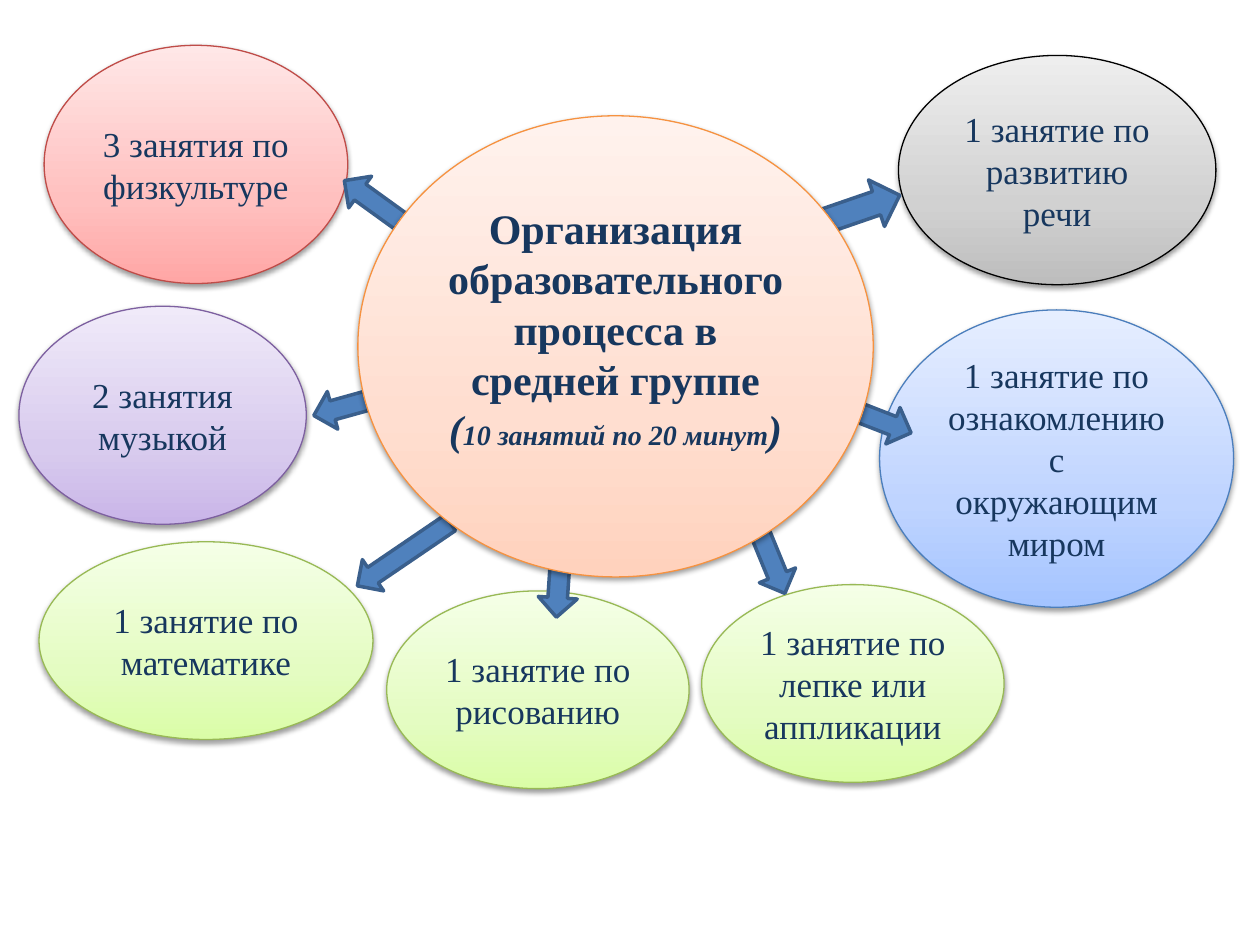
import pptx
import pptx.dml.color
import pptx.enum.shapes
import pptx.enum.text
import pptx.oxml
import pptx.oxml.ns
import pptx.util

Pt = pptx.util.Pt
SHAPES = pptx.enum.shapes.MSO_SHAPE

COLORS = {"text": "17375E", "arrow": "4F81BD", "arrow_line": "3A5F8C", "shadow": "000000"}

# Outline, then the gradient from bottom to top
PALETTES = {
    "red": ("BF4C48", "FFA6A5", "FFC0BF", "FFE7E7"),
    "gray": ("000000", "BDBDBD", "D1D1D1", "EEEEEE"),
    "blue": ("4B7EBC", "A4C4FF", "BFD4FF", "E6EEFF"),
    "green": ("98B955", "DAFDA7", "E4FCC2", "F5FFE7"),
    "purple": ("7D60A0", "C9B5E8", "D8CBEE", "F0EAF9"),
    "orange": ("F69240", "FFD2BD", "FFDED0", "FFF2ED"),
}

LESSONS = [
    ("3 занятия по физкультуре", "red", (25.2, 25.9, 173.5, 136.1)),
    ("1 занятие по развитию речи", "gray", (513.4, 31.7, 181.4, 131)),
    ("1 занятие по ознакомлению с окружающим миром", "blue", (502.6, 177.1, 202.3, 169.9)),
    ("1 занятие по математике", "green", (22.3, 309.6, 190.8, 113)),
    ("2 занятия музыкой", "purple", (10.8, 175, 164.2, 124.6)),
    ("1 занятие по рисованию", "green", (221, 337.7, 172.8, 113)),
    ("1 занятие по лепке или аппликации", "green", (401, 334.1, 172.8, 113)),
]

ARROW_SIZE = (39.6, 22.3)
ARROWS = [  # left, top, rotation, size
    (193, 103.7, 35.9, ARROW_SIZE),
    (464.4, 105.8, 161, (51.1, 28.1)),
    (198.7, 306, 325.8, (64.1, 21.6)),
    (178.6, 221, 344.5, ARROW_SIZE),
    (482.4, 229, 201.3, ARROW_SIZE),
    (299.5, 321.8, 273.8, ARROW_SIZE),
    (421.2, 309.6, 247.7, ARROW_SIZE),
]


def rgb(value):
    return pptx.dml.color.RGBColor.from_string(value)


def element(xml):
    """Parse an XML text whose root has a slot for the DrawingML namespace."""
    return pptx.oxml.parse_xml(xml.format(ns=pptx.oxml.ns.nsdecls("a")))


class Painter:
    font_name = "Times New Roman"

    def __init__(self, page):
        self.page = page

    def shape(self, kind, bounds, line_color, line_width):
        shape = self.page.shapes.add_shape(kind, *(Pt(value) for value in bounds))
        shape.line.color.rgb = rgb(line_color)
        shape.line.width = Pt(line_width)
        shape.shadow.inherit = False
        return shape

    def oval(self, palette, bounds):
        line_color, *gradient = PALETTES[palette]
        oval = self.shape(SHAPES.OVAL, bounds, line_color, 0.75)
        stops = "".join(
            f'<a:gs pos="{position}"><a:srgbClr val="{color}"/></a:gs>'
            for position, color in zip((0, 35000, 100000), gradient)
        )
        properties = oval.element.spPr
        properties.find(pptx.oxml.ns.qn("a:ln")).addprevious(element(
            f'<a:gradFill {{ns}} rotWithShape="1"><a:gsLst>{stops}</a:gsLst>'
            '<a:lin ang="16200000" scaled="1"/></a:gradFill>'
        ))
        properties.find(pptx.oxml.ns.qn("a:effectLst")).append(element(
            f'<a:outerShdw {{ns}} blurRad="{Pt(3.1)}" dist="{Pt(1.6)}" dir="5400000" '
            f'rotWithShape="0"><a:srgbClr val="{COLORS["shadow"]}">'
            '<a:alpha val="38000"/></a:srgbClr></a:outerShdw>'
        ))
        frame = oval.text_frame
        frame.word_wrap = True
        frame.vertical_anchor = pptx.enum.text.MSO_ANCHOR.MIDDLE
        return frame

    def style(self, para, size, bold=False, italic=False):
        para.alignment = pptx.enum.text.PP_ALIGN.CENTER
        font = para.font
        font.name = self.font_name
        font.size = Pt(size)
        font.bold = bold
        font.italic = italic
        font.color.rgb = rgb(COLORS["text"])

    def lesson(self, text, palette, bounds):
        para = self.oval(palette, bounds).paragraphs[0]
        para.text = text
        self.style(para, 20)

    def arrow(self, left, top, rotation, size):
        arrow = self.shape(SHAPES.LEFT_ARROW, (left, top, *size), COLORS["arrow_line"], 2)
        arrow.fill.solid()
        arrow.fill.fore_color.rgb = rgb(COLORS["arrow"])
        arrow.rotation = rotation

    def center(self, heading, note, bounds):
        frame = self.oval("orange", bounds)
        frame.margin_bottom = Pt(24.3)
        heading_para = frame.paragraphs[0]
        heading_para.text = heading
        self.style(heading_para, 24, bold=True)
        note_para = frame.add_paragraph()
        self.style(note_para, 24, bold=True, italic=True)
        for text in ("(", note, ")"):
            span = note_para.add_run()
            span.text = text
            if text == note:
                span.font.size = Pt(16)


def main():
    deck = pptx.Presentation()
    deck.slide_width, deck.slide_height = Pt(720), Pt(540)
    painter = Painter(deck.slides.add_slide(deck.slide_layouts[6]))
    for lesson in LESSONS:
        painter.lesson(*lesson)
    for arrow in ARROWS:
        painter.arrow(*arrow)
    painter.center(
        "Организация образовательного процесса в средней группе",
        "10 занятий по 20 минут",
        (204.5, 66.2, 294.5, 263.5),
    )
    deck.save("out.pptx")


if __name__ == "__main__":
    main()
